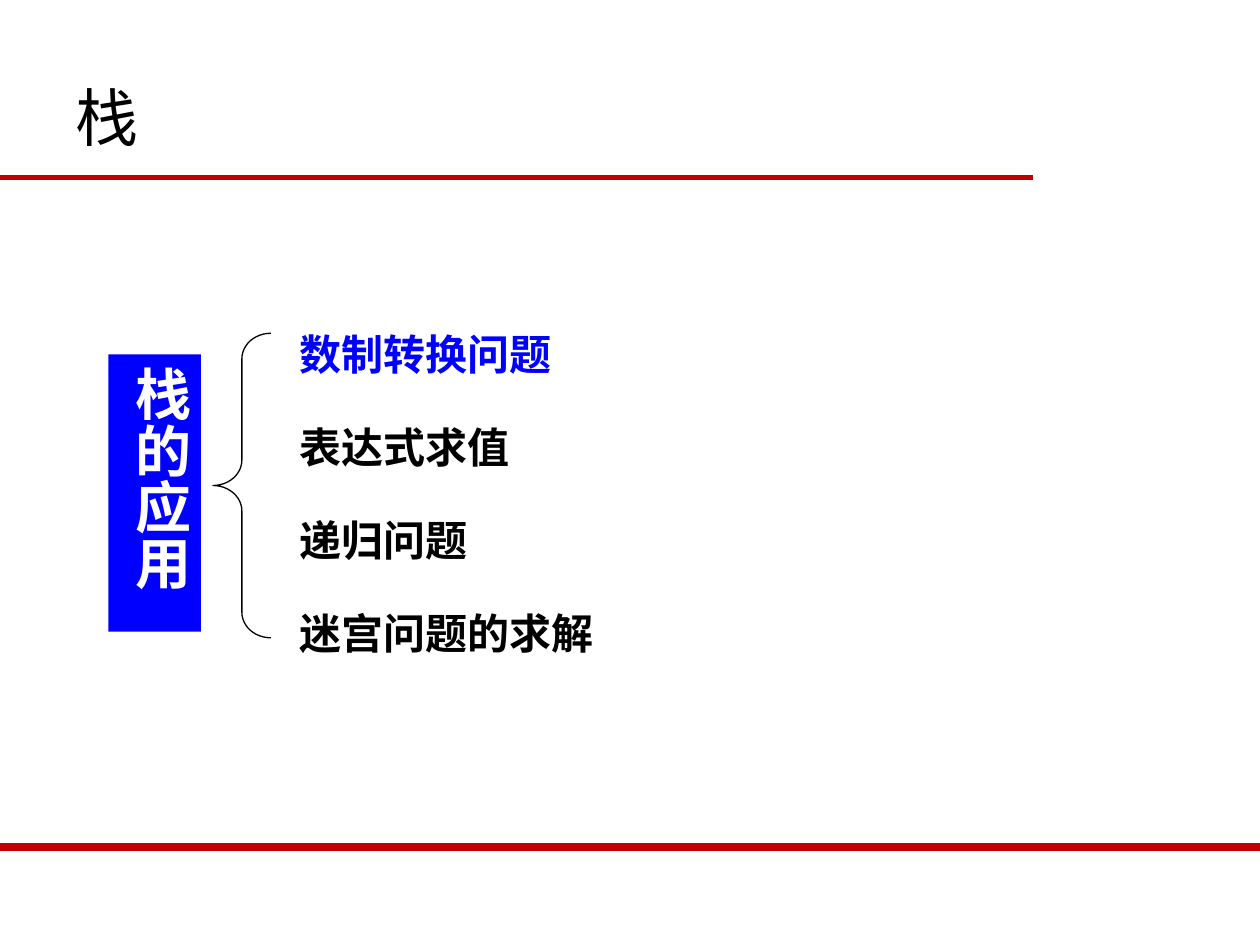
from lxml import etree
from pptx import Presentation
from pptx.dml.color import RGBColor
from pptx.enum.shapes import MSO_CONNECTOR, MSO_SHAPE
from pptx.enum.text import MSO_ANCHOR, PP_ALIGN
from pptx.oxml.ns import qn
from pptx.util import Pt

RED = RGBColor(0xC0, 0x00, 0x00)
BLUE = RGBColor(0x00, 0x00, 0xFF)
BLACK = RGBColor(0x00, 0x00, 0x00)
WHITE = RGBColor(0xFF, 0xFF, 0xFF)
CJK_FONT = "Noto Sans CJK SC"
APPLICATIONS = ["数制转换问题", "表达式求值", "递归问题", "迷宫问题的求解"]


def write(shape, text, size, color, font=CJK_FONT, bold=False):
    """Put one left-aligned run of Chinese text in a shape."""
    para = shape.text_frame.paragraphs[0]
    para.alignment = PP_ALIGN.LEFT
    span = para.add_run()
    span.text = text
    span.font.size = Pt(size)
    span.font.bold = bold
    span.font.name = font
    span.font.color.rgb = color
    east_asian = etree.SubElement(span._r.get_or_add_rPr(), qn("a:ea"))
    east_asian.set("typeface", CJK_FONT)


def add_text(page, left, top, width, height, text, size, color, **style):
    box = page.shapes.add_textbox(Pt(left), Pt(top), Pt(width), Pt(height))
    box.text_frame.word_wrap = True
    box.text_frame.vertical_anchor = MSO_ANCHOR.MIDDLE
    write(box, text, size, color, **style)


def add_rule(page, top, width, weight):
    rule = page.shapes.add_connector(
        MSO_CONNECTOR.STRAIGHT, 0, Pt(top), Pt(width), Pt(top))
    rule.line.color.rgb = RED
    rule.line.width = Pt(weight)
    etree.SubElement(rule._element.spPr, qn("a:effectLst"))


def add_topic(page, left, top, width, height):
    """Blue block with the topic written vertically."""
    block = page.shapes.add_shape(
        MSO_SHAPE.RECTANGLE, Pt(left), Pt(top), Pt(width), Pt(height))
    block.shadow.inherit = False
    block.fill.solid()
    block.fill.fore_color.rgb = BLUE
    block.line.fill.background()
    block.text_frame.vertical_anchor = MSO_ANCHOR.TOP
    block.text_frame._txBody.bodyPr.set("vert", "eaVert")
    write(block, "栈的应用", 32, WHITE, font="Comic Neue", bold=True)


def add_brace(page, left, top, width, height):
    brace = page.shapes.add_shape(
        MSO_SHAPE.LEFT_BRACE, Pt(left), Pt(top), Pt(width), Pt(height))
    brace.shadow.inherit = False
    brace.adjustments[0] = 0.44
    brace.adjustments[1] = 0.5
    brace.fill.background()
    brace.line.color.rgb = BLACK
    brace.line.width = Pt(0.75)


def add_applications(page, left, top, width, height):
    """Evenly spaced list, with its first entry highlighted."""
    row_height = 36
    pitch = (height - row_height) / (len(APPLICATIONS) - 1)
    for index, text in enumerate(APPLICATIONS):
        add_text(page, left, top + index * pitch, width, row_height, text, 24,
                 BLUE if index == 0 else BLACK, font="Calibri", bold=True)


def main():
    deck = Presentation()
    deck.slide_width, deck.slide_height = Pt(720), Pt(540)
    page = deck.slides.add_slide(deck.slide_layouts[6])

    # Header and footer rules
    add_rule(page, 101.5, 590.4, 3)
    add_rule(page, 483.8, 720, 4.5)

    # Title
    add_text(page, 36, 21.6, 648, 90, "栈", 36, BLACK)

    # Topic, brace and its applications
    add_topic(page, 62, 202.5, 52.8, 158.5)
    add_brace(page, 121.7, 190.5, 33.1, 174)
    add_applications(page, 164.2, 184.3, 185.8, 195.2)

    deck.save("out.pptx")


if __name__ == "__main__":
    main()
